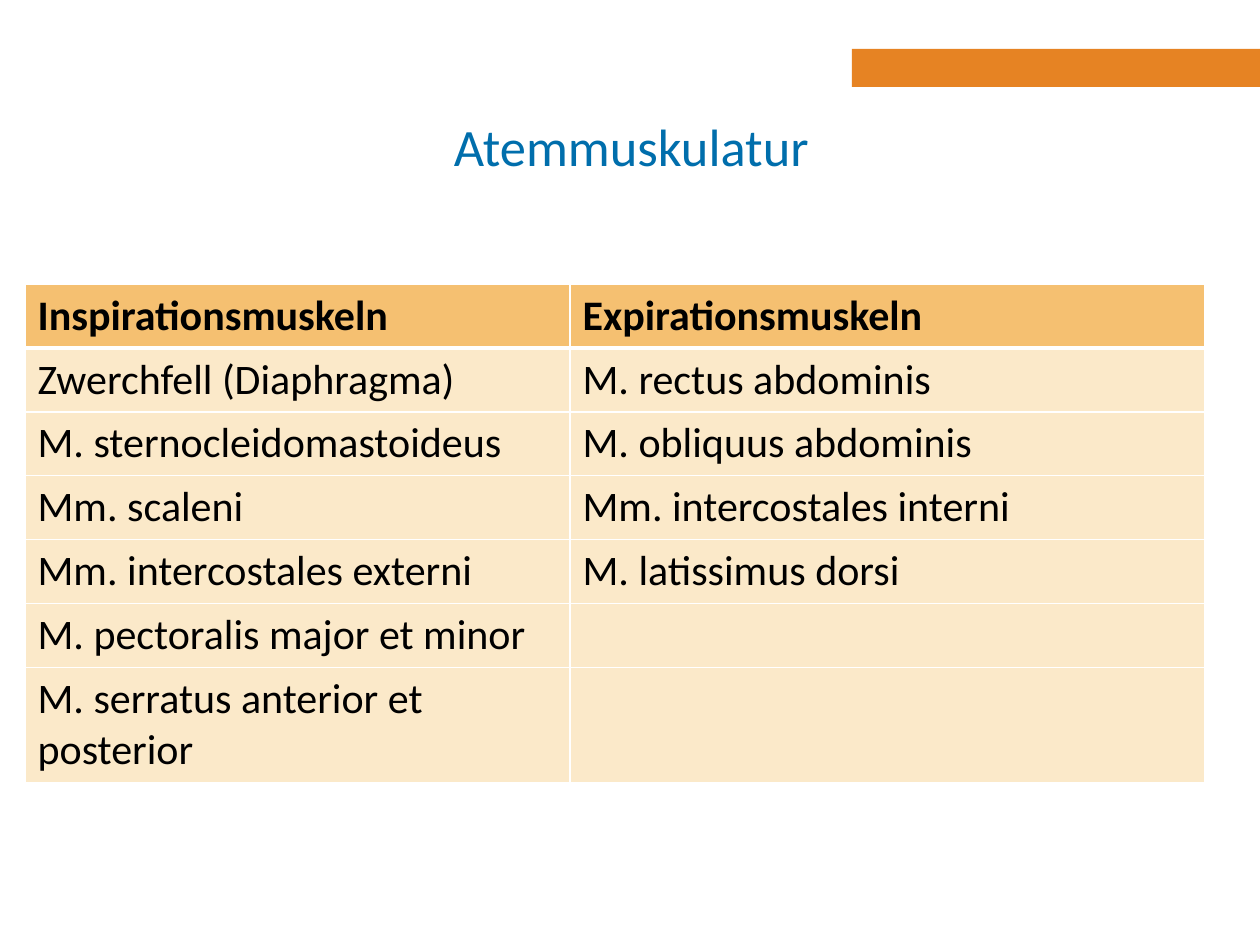
from dataclasses import dataclass

from lxml.etree import SubElement
from pptx import Presentation
from pptx.dml.color import RGBColor as RGB
from pptx.enum.shapes import MSO_SHAPE as Shape
from pptx.enum.text import MSO_ANCHOR as Anchor, PP_ALIGN as Align
from pptx.oxml.ns import qn
from pptx.util import Pt

EMU_PER_PX = 914400 // 126


@dataclass(frozen=True)
class Theme:
    font: str = "Calibri"
    title_size: int = 30
    table_size: int = 24
    title: str = "006EAC"
    text: str = "000000"
    accent: str = "E68323"
    header_fill: str = "F5C071"
    body_fill: str = "FBE9C9"
    border: str = "FFFFFF"
    thin: int = 1
    thick: int = 3


THEME = Theme()

MUSCLES = [
    ("Inspirationsmuskeln", "Expirationsmuskeln"),
    ("Zwerchfell (Diaphragma)", "M. rectus abdominis"),
    ("M. sternocleidomastoideus", "M. obliquus abdominis"),
    ("Mm. scaleni", "Mm. intercostales interni"),
    ("Mm. intercostales externi", "M. latissimus dorsi"),
    ("M. pectoralis major et minor", ""),
    ("M. serratus anterior et posterior", ""),
]
COLUMN_WIDTHS = [545, 635]
ROW_HEIGHTS = [63] * 6 + [114]


def px(*lengths):
    return [length * EMU_PER_PX for length in lengths]


def style_font(paragraph, size, color, bold=False):
    font = paragraph.font
    font.name = THEME.font
    font.size = Pt(size)
    font.bold = bold
    font.color.rgb = RGB.from_string(color)


def add_accent_bar(slide, *box):
    bar = slide.shapes.add_shape(Shape.RECTANGLE, *px(*box))
    bar.shadow.inherit = False
    bar.fill.solid()
    bar.fill.fore_color.rgb = RGB.from_string(THEME.accent)
    bar.line.fill.background()


def set_title(slide, wording, *box):
    title = slide.shapes.title
    title.left, title.top, title.width, title.height = px(*box)
    frame = title.text_frame
    frame.text = wording
    frame.vertical_anchor = Anchor.MIDDLE
    heading = frame.paragraphs[0]
    heading.alignment = Align.CENTER
    style_font(heading, THEME.title_size, THEME.title)


def set_borders(cell, top, bottom):
    properties = cell._tc.get_or_add_tcPr()
    widths = {"L": THEME.thin, "R": THEME.thin, "T": top, "B": bottom}
    for side, width in widths.items():
        line = SubElement(properties, qn(f"a:ln{side}"), w=str(Pt(width)))
        fill = SubElement(line, qn("a:solidFill"))
        SubElement(fill, qn("a:srgbClr"), val=THEME.border)


def fill_cell(cell, wording, row):
    is_header = row == 0
    set_borders(
        cell,
        top=THEME.thick if row == 1 else THEME.thin,
        bottom=THEME.thick if is_header else THEME.thin,
    )
    cell.fill.solid()
    cell.fill.fore_color.rgb = RGB.from_string(
        THEME.header_fill if is_header else THEME.body_fill
    )
    if wording:
        cell.text = wording
        style_font(cell.text_frame.paragraphs[0], THEME.table_size, THEME.text, is_header)


def add_muscle_table(slide, left, top):
    box = px(left, top, sum(COLUMN_WIDTHS), sum(ROW_HEIGHTS))
    table = slide.shapes.add_table(len(MUSCLES), len(COLUMN_WIDTHS), *box).table
    table.horz_banding = False
    for column, width in zip(table.columns, px(*COLUMN_WIDTHS)):
        column.width = width
    for row, height in zip(table.rows, px(*ROW_HEIGHTS)):
        row.height = height
    for row, muscles in enumerate(MUSCLES):
        for column, muscle in enumerate(muscles):
            fill_cell(table.cell(row, column), muscle, row)


def main():
    deck = Presentation()
    deck.slide_width, deck.slide_height = px(1260, 945)
    slide = deck.slides.add_slide(deck.slide_layouts[5])
    add_accent_bar(slide, 852, 49, 408, 38)
    set_title(slide, "Atemmuskulatur", 186, 87, 891, 117)
    add_muscle_table(slide, 25, 284)
    deck.save("out.pptx")


if __name__ == "__main__":
    main()
